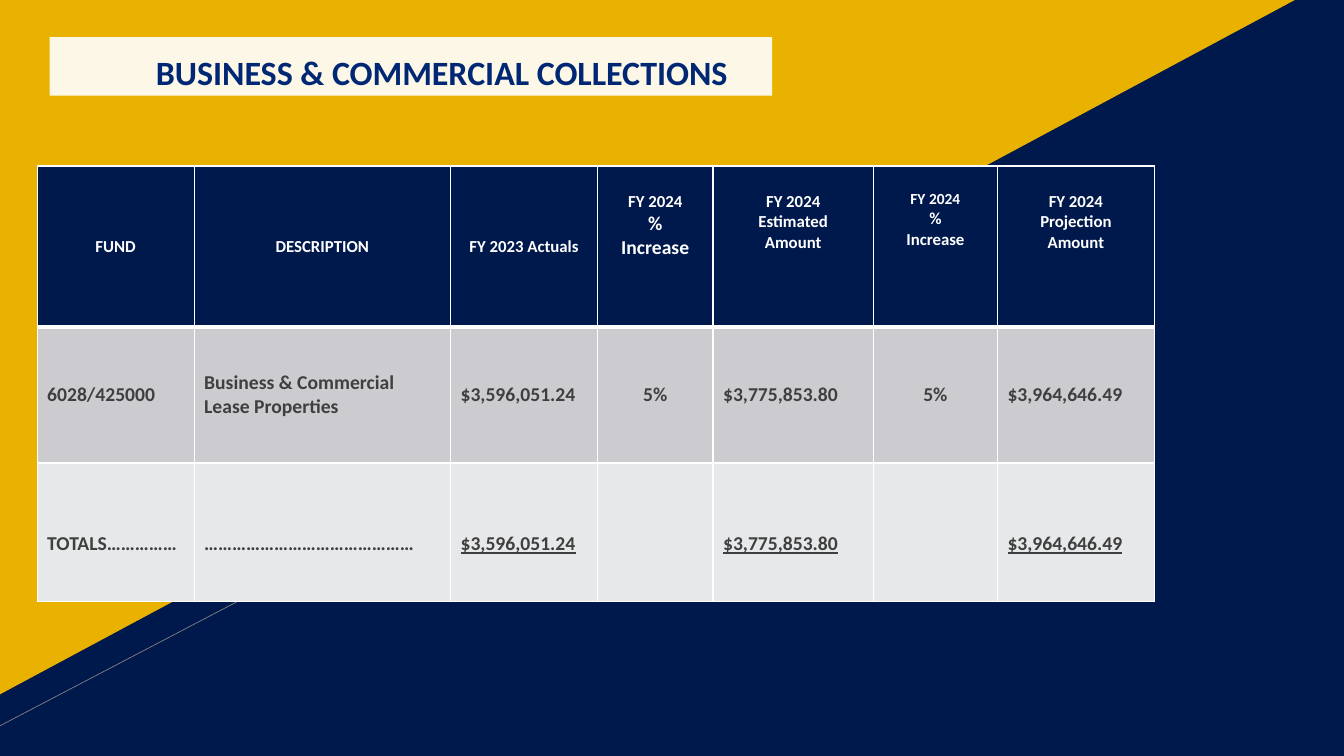
import pptx
import pptx.dml.color
import pptx.enum.shapes
import pptx.enum.text
import pptx.oxml
import pptx.oxml.ns
import pptx.util

Pt = pptx.util.Pt
RGB = pptx.dml.color.RGBColor
SHAPE = pptx.enum.shapes.MSO_SHAPE
ALIGN = pptx.enum.text.PP_ALIGN
MIDDLE = pptx.enum.text.MSO_ANCHOR.MIDDLE
TOP = pptx.enum.text.MSO_ANCHOR.TOP

NAVY = RGB(0x00, 0x19, 0x4C)
GOLD = RGB(0xEA, 0xB2, 0x00)
TITLE_BLUE = RGB(0x00, 0x27, 0x74)
WHITE = RGB(0xFF, 0xFF, 0xFF)
GRAY = RGB(0x80, 0x80, 0x80)
TEXT = RGB(0x3F, 0x3F, 0x3F)
BODY_FILL = RGB(0xCC, 0xCC, 0xD0)
TOTAL_FILL = RGB(0xE7, 0xE8, 0xE9)

COL_WIDTHS = [112.14, 183.2, 105, 82.5, 114.6, 88.6, 112.14]
ROW_HEIGHTS = [115, 97.2, 98.6]
# Each header cell: its lines with their sizes
HEADERS = [
    [("FUND", 12)],
    [("DESCRIPTION", 12)],
    [("FY 2023 Actuals", 12)],
    [("FY 2024", 12), ("%", 14), ("Increase", 14)],
    [("FY 2024", 12), ("Estimated", 12), ("Amount", 12)],
    [("FY 2024", 11), ("%", 12), ("Increase", 12)],
    [("FY 2024", 12), ("Projection", 12), ("Amount", 12)],
]
FUND_ROW = ["6028/425000", "Business & Commercial Lease Properties", "$3,596,051.24",
            "5%", "$3,775,853.80", "5%", "$3,964,646.49"]
TOTAL_ROW = ["TOTALS……………", "………………………………………", "$3,596,051.24",
             "", "$3,775,853.80", "", "$3,964,646.49"]


class Deck:
    font = "Calibri"

    def __init__(self, prs):
        self.slide = prs.slides.add_slide(prs.slide_layouts[6])

    def background(self, color):
        fill = self.slide.background.fill
        fill.solid()
        fill.fore_color.rgb = color

    def shape(self, kind, x, y, w, h, color, opacity=100, flip_v=False):
        sp = self.slide.shapes.add_shape(kind, Pt(x), Pt(y), Pt(w), Pt(h))
        sp.shadow.inherit = False
        sp.line.fill.background()
        sp.fill.solid()
        sp.fill.fore_color.rgb = color
        if opacity < 100:
            clr = sp._element.spPr.find(".//" + pptx.oxml.ns.qn("a:srgbClr"))
            alpha = pptx.oxml.parse_xml(
                f'<a:alpha {pptx.oxml.ns.nsdecls("a")} val="{opacity * 1000}"/>')
            clr.append(alpha)
        if flip_v:
            sp._element.spPr.xfrm.set("flipV", "1")
        return sp

    def line(self, x1, y1, x2, y2, color, width):
        cx = self.slide.shapes.add_connector(
            pptx.enum.shapes.MSO_CONNECTOR.STRAIGHT, Pt(x1), Pt(y1), Pt(x2), Pt(y2))
        cx.line.color.rgb = color
        cx.line.width = Pt(width)
        cx._element.spPr.append(
            pptx.oxml.parse_xml(f'<a:effectLst {pptx.oxml.ns.nsdecls("a")}/>'))

    def paragraph(self, p, text, size, color, align, underline=None):
        p.text = text
        p.alignment = align
        p.font.name = self.font
        p.font.size = Pt(size)
        p.font.bold = True
        p.font.color.rgb = color
        p.font.underline = underline

    def table(self, x, y, widths, heights):
        frame = self.slide.shapes.add_table(
            len(heights), len(widths), Pt(x), Pt(y), Pt(sum(widths)), Pt(sum(heights)))
        for col, width in zip(frame.table.columns, widths):
            col.width = Pt(width)
        for row, height in zip(frame.table.rows, heights):
            row.height = Pt(height)
        return frame.table

    def cell(self, cell, lines, color, fill, align, top=3.6, anchor=MIDDLE,
             underline=None, border_top=1, border_bottom=1):
        """Fill a cell with (text, size) lines and white borders."""
        cell.vertical_anchor = anchor
        cell.margin_top = Pt(top)
        tf = cell.text_frame
        for i, (text, size) in enumerate(lines):
            p = tf.add_paragraph() if i else tf.paragraphs[0]
            self.paragraph(p, text, size, color, align, underline)
        tcPr = cell._tc.get_or_add_tcPr()
        for side, width in zip("LRTB", (1, 1, border_top, border_bottom)):
            tcPr.append(pptx.oxml.parse_xml(
                f'<a:ln{side} {pptx.oxml.ns.nsdecls("a")} w="{Pt(width)}"><a:solidFill>'
                f'<a:srgbClr val="{WHITE}"/></a:solidFill></a:ln{side}>'))
        cell.fill.solid()
        cell.fill.fore_color.rgb = fill


def main():
    prs = pptx.Presentation()
    prs.slide_width, prs.slide_height = Pt(960), Pt(540)
    s = Deck(prs)

    s.background(NAVY)
    s.shape(SHAPE.RIGHT_TRIANGLE, 0, 0, 925, 496, GOLD, flip_v=True)
    s.line(0, 518.4, 185.8, 421.2, GRAY, 0.5)

    title = s.shape(SHAPE.RECTANGLE, 35.5, 26.6, 516, 41.8, WHITE, opacity=90)
    tf = title.text_frame
    tf.word_wrap = True
    tf.vertical_anchor = MIDDLE
    tf.margin_left, tf.margin_right = Pt(51.4), Pt(7.2)
    tf.margin_top, tf.margin_bottom = Pt(8), Pt(0)
    s.paragraph(tf.paragraphs[0], "BUSINESS & COMMERCIAL COLLECTIONS", 24.3,
                TITLE_BLUE, ALIGN.CENTER)

    table = s.table(26.5, 118.6, COL_WIDTHS, ROW_HEIGHTS)
    for col, lines in enumerate(HEADERS):
        stacked = len(lines) > 1
        first_size = lines[0][1]
        s.cell(table.cell(0, col), lines, WHITE, NAVY, ALIGN.CENTER,
               top=3.6 + 1.22 * first_size if stacked else 3.6,
               anchor=TOP if stacked else MIDDLE, border_bottom=3)
    for col, text in enumerate(FUND_ROW):
        s.cell(table.cell(1, col), [(text, 14)], TEXT, BODY_FILL,
               ALIGN.CENTER if text.endswith("%") else ALIGN.LEFT, border_top=3)
    for col, text in enumerate(TOTAL_ROW):
        s.cell(table.cell(2, col), [(text, 14)], TEXT, TOTAL_FILL, ALIGN.LEFT,
               top=20.7, underline=text.startswith("$") or None)

    prs.save("out.pptx")


if __name__ == "__main__":
    main()
